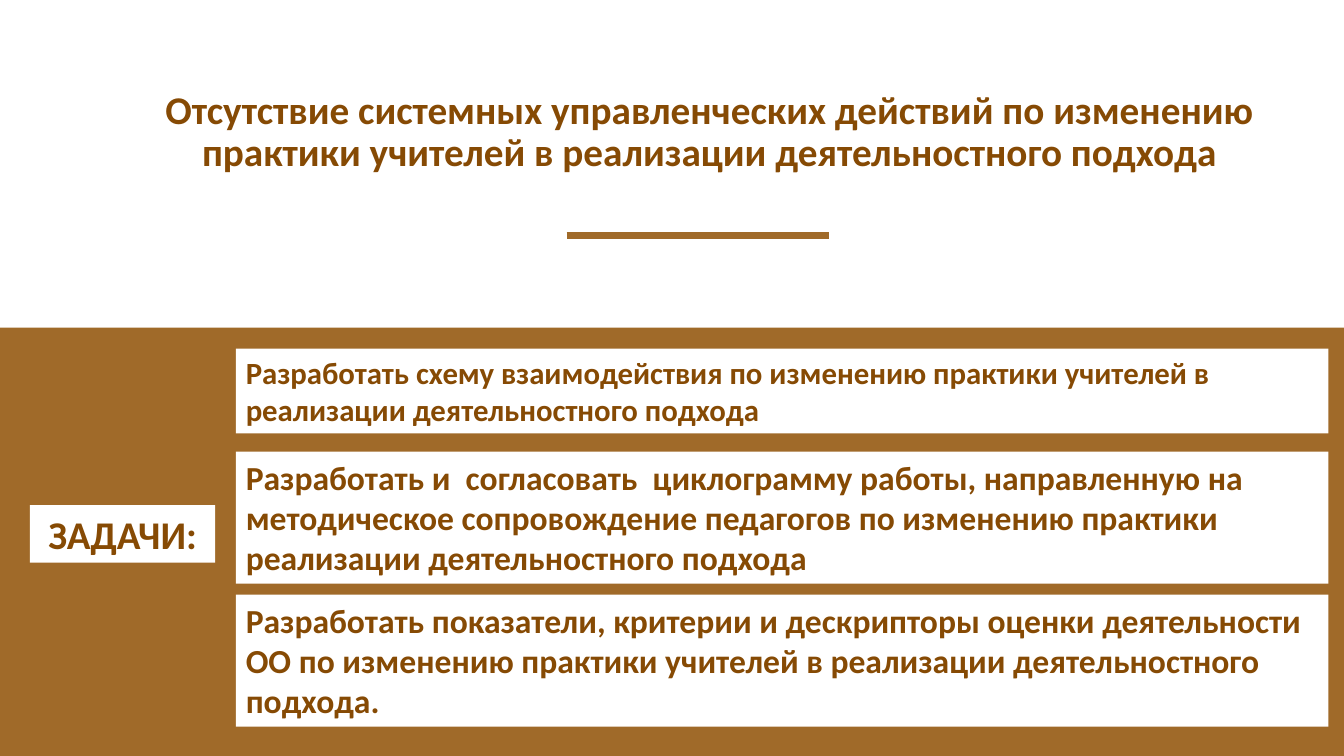
"""Build a slide with a problem statement and the three tasks that follow from it."""
from lxml.etree import SubElement
from pptx import Presentation
from pptx.dml.color import RGBColor
from pptx.enum.shapes import MSO_CONNECTOR, MSO_SHAPE
from pptx.enum.text import MSO_ANCHOR, MSO_AUTO_SIZE as AUTO, PP_ALIGN
from pptx.oxml.ns import qn
from pptx.util import Pt

COLORS = {"band": "A06A29", "text": "864A04", "box": "FFFFFF"}
FONT = "Calibri"
TASK_LEFT, TASK_WIDTH = 168.5, 780.5
TITLE = ("Отсутствие системных управленческих действий по изменению "
         "практики учителей в реализации деятельностного подхода")
TASKS = [
    (249.1, 60.5, 22, "Разработать схему взаимодействия по изменению практики "
     "учителей в реализации деятельностного подхода"),
    (322.6, 94.3, 24, "Разработать и  согласовать  циклограмму работы, направленную на "
     "методическое сопровождение педагогов по изменению практики "
     "реализации деятельностного подхода"),
    (424.8, 94.3, 24, "Разработать показатели, критерии и дескрипторы оценки "
     "деятельности ОО по изменению практики учителей в реализации "
     "деятельностного подхода."),
]


def color(name):
    return RGBColor.from_string(COLORS[name])


def write(sp, text, size, align, anchor=MSO_ANCHOR.TOP):
    tf = sp.text_frame
    tf.word_wrap = True
    tf.vertical_anchor = anchor
    p = tf.paragraphs[0]
    p.alignment = align
    r = p.add_run()
    r.text = text
    r.font.name = FONT
    r.font.size = Pt(size)
    r.font.bold = True
    r.font.color.rgb = color("text")
    return tf


def add_rect(s, left, top, width, height, fill):
    sp = s.shapes.add_shape(MSO_SHAPE.RECTANGLE, Pt(left), Pt(top), Pt(width), Pt(height))
    sp.shadow.inherit = False
    sp.fill.solid()
    sp.fill.fore_color.rgb = color(fill)
    sp.line.fill.background()
    return sp


def add_label(s, left, top, width, height, text, size, align=PP_ALIGN.LEFT):
    sp = add_rect(s, left, top, width, height, "box")
    write(sp, text, size, align).auto_size = AUTO.SHAPE_TO_FIT_TEXT


def add_title(s, left, top, width, height, text):
    sp = s.shapes.add_textbox(Pt(left), Pt(top), Pt(width), Pt(height))
    tf = write(sp, text, 28, PP_ALIGN.CENTER, MSO_ANCHOR.MIDDLE)
    tf.paragraphs[0].line_spacing = 0.9


def add_rule(s, left, right, y):
    line = s.shapes.add_connector(MSO_CONNECTOR.STRAIGHT, Pt(left), Pt(y), Pt(right), Pt(y))
    line.line.color.rgb = color("band")
    line.line.width = Pt(5)
    SubElement(line._element.spPr, qn("a:effectLst"))


def main():
    prs = Presentation()
    prs.slide_width, prs.slide_height = Pt(960), Pt(540)
    s = prs.slides.add_slide(prs.slide_layouts[6])
    add_rect(s, 0, 234, 960, 306, "band")
    add_title(s, 108, 50.4, 797, 88.6, TITLE)
    add_rule(s, 404.8, 592.4, 168)
    add_label(s, 21.4, 360.8, 132.3, 41.2, "ЗАДАЧИ:", 28, PP_ALIGN.CENTER)
    for top, height, size, text in TASKS:
        add_label(s, TASK_LEFT, top, TASK_WIDTH, height, text, size)
    prs.save("out.pptx")


if __name__ == "__main__":
    main()
